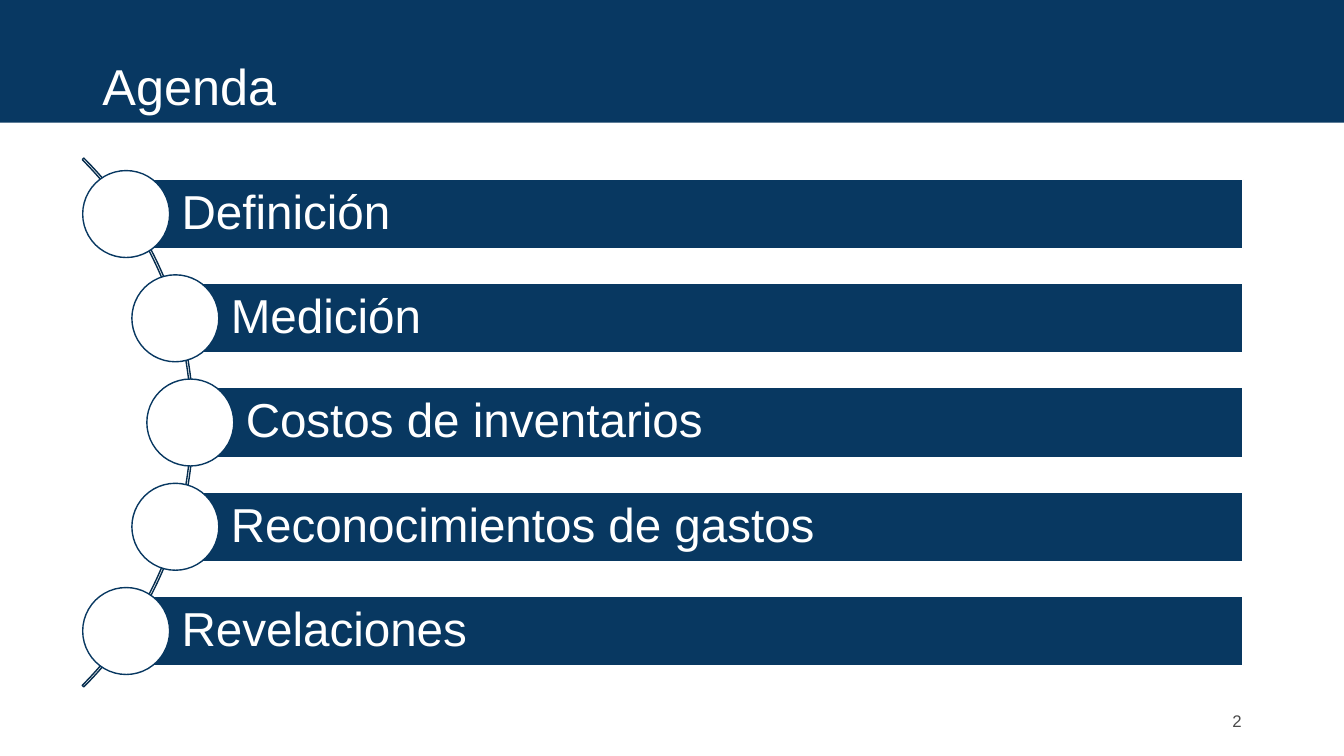
from dataclasses import dataclass
from math import sqrt

from pptx import Presentation
from pptx import util as u
from pptx.dml.color import RGBColor
from pptx.enum import shapes, text


@dataclass(frozen=True)
class Theme:
    font: str = "Arial"
    banner: str = "083862"
    bar: str = "083861"
    arc: str = "062D4E"
    white: str = "FFFFFF"
    gray: str = "4A4A4A"
    title_size: int = 36
    item_size: int = 34
    number_size: int = 12
    line_width: int = 1


class AgendaSlide:
    COLUMNS = 160
    ROWS = 90

    def __init__(self, presentation, theme):
        self.theme = theme
        self.cell_width = presentation.slide_width / self.COLUMNS
        self.cell_height = presentation.slide_height / self.ROWS
        self.slide = presentation.slides.add_slide(presentation.slide_layouts[5])

    def box(self, left, top, width, height):
        return (
            u.Emu(round(left * self.cell_width)),
            u.Emu(round(top * self.cell_height)),
            u.Emu(round(width * self.cell_width)),
            u.Emu(round(height * self.cell_height)),
        )

    def label(self, shape, words, size, color, align, anchor, left_inset=1.2, top_inset=0.6):
        frame = shape.text_frame
        frame.text = words
        frame.word_wrap = True
        frame.auto_size = text.MSO_AUTO_SIZE.NONE
        frame.vertical_anchor = anchor
        frame.margin_left, frame.margin_top, _, _ = self.box(left_inset, top_inset, 0, 0)
        paragraph = frame.paragraphs[0]
        paragraph.alignment = align
        font = paragraph.runs[0].font
        font.name = self.theme.font
        font.size = u.Pt(size)
        font.color.rgb = RGBColor.from_string(color)
        return paragraph

    def shape(self, kind, place, fill=None, line=None):
        shape = self.slide.shapes.add_shape(kind, *self.box(*place))
        shape.shadow.inherit = False
        if fill:
            shape.fill.solid()
            shape.fill.fore_color.rgb = RGBColor.from_string(fill)
        else:
            shape.fill.background()
        if line:
            shape.line.color.rgb = RGBColor.from_string(line)
            shape.line.width = u.Pt(self.theme.line_width)
        else:
            shape.line.fill.background()
        return shape

    def title(self, words):
        title = self.slide.shapes.title
        title.left, title.top, title.width, title.height = self.box(11, 5.3, 138, 7.3)
        self.label(title, words, self.theme.title_size, self.theme.white,
                   text.PP_ALIGN.LEFT, text.MSO_ANCHOR.TOP, top_inset=1.2)
        banner = self.shape(shapes.MSO_SHAPE.RECTANGLE,
                            (0, 0, self.COLUMNS, 14.6), self.theme.banner)
        title.element.addprevious(banner.element)

    def page_number(self, number):
        number_box = self.slide.shapes.add_textbox(*self.box(113, 83.4, 36, 4.8))
        self.label(number_box, str(number), self.theme.number_size, self.theme.gray,
                   text.PP_ALIGN.RIGHT, text.MSO_ANCHOR.MIDDLE)

    def arc(self, center_x, center_y, radius):
        arc = self.shape(
            shapes.MSO_SHAPE.BLOCK_ARC,
            (center_x - radius, center_y - radius, 2 * radius, 2 * radius),
            line=self.theme.arc)
        for index, value in enumerate((189, 27, 0.003)):
            arc.adjustments[index] = value

    def bar(self, words, left, right, center_y, height):
        bar = self.shape(shapes.MSO_SHAPE.RECTANGLE,
                         (left, center_y - height / 2, right - left, height),
                         self.theme.bar, self.theme.white)
        paragraph = self.label(bar, words, self.theme.item_size, self.theme.white,
                               text.PP_ALIGN.LEFT, text.MSO_ANCHOR.MIDDLE,
                               left_inset=6.6, top_inset=1.1)
        bar.text_frame.margin_bottom = bar.text_frame.margin_top
        paragraph.line_spacing = 0.9

    def circle(self, center_x, center_y, diameter):
        self.shape(
            shapes.MSO_SHAPE.OVAL,
            (center_x - diameter / 2, center_y - diameter / 2, diameter, diameter),
            self.theme.white, self.theme.bar)

    def agenda(self, items):
        center_x, center_y = -21.5, 50.3
        track_radius, pitch = 44.16, 12.41
        self.arc(center_x, center_y, 44.52)
        for index, words in enumerate(items):
            offset = (index - (len(items) - 1) / 2) * pitch
            x = center_x + sqrt(track_radius ** 2 - offset ** 2)
            y = center_y + offset
            self.bar(words, x, 148, y, 8.28)
            self.circle(x, y, 10.35)


def main():
    presentation = Presentation()
    presentation.slide_width = u.Inches(13.33)
    presentation.slide_height = u.Inches(7.5)
    slide = AgendaSlide(presentation, Theme())
    slide.title("Agenda")
    slide.page_number(2)
    slide.agenda((
        "Definición",
        "Medición",
        "Costos de inventarios",
        "Reconocimientos de gastos",
        "Revelaciones",
    ))
    presentation.save("out.pptx")


if __name__ == "__main__":
    main()
